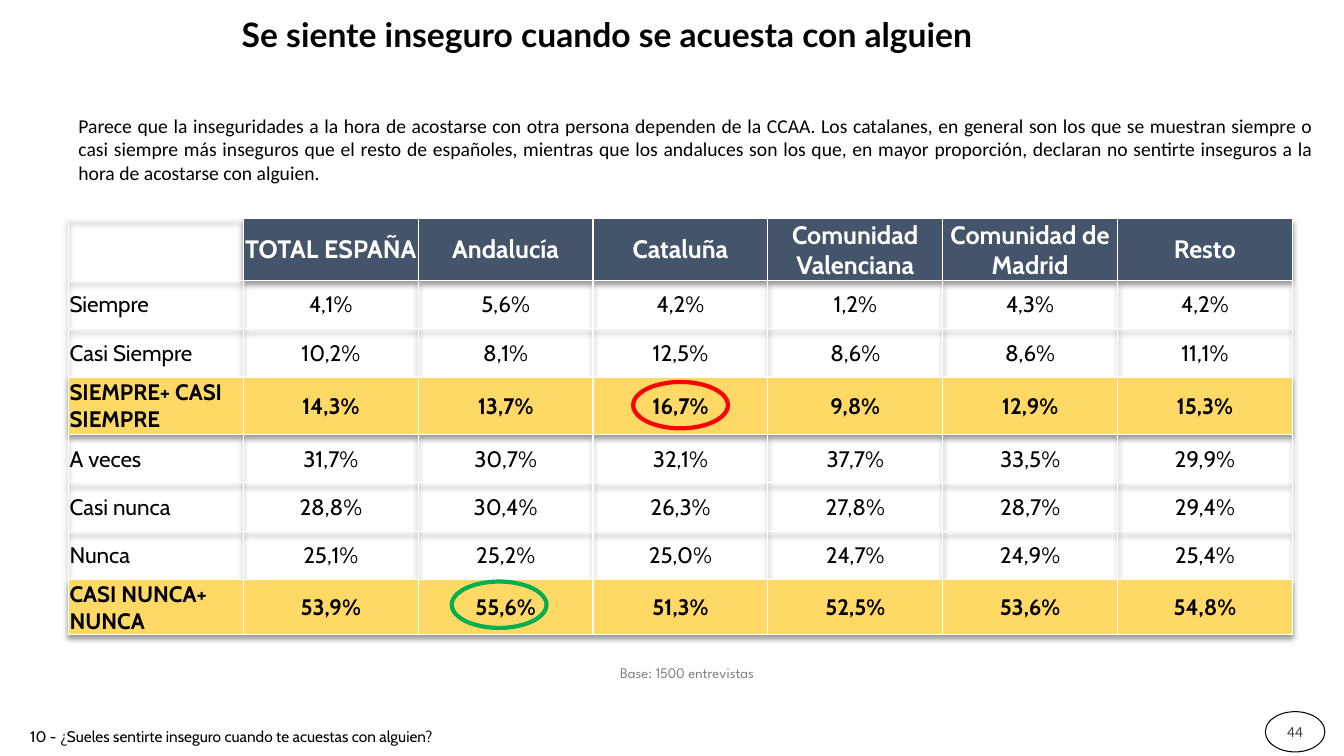
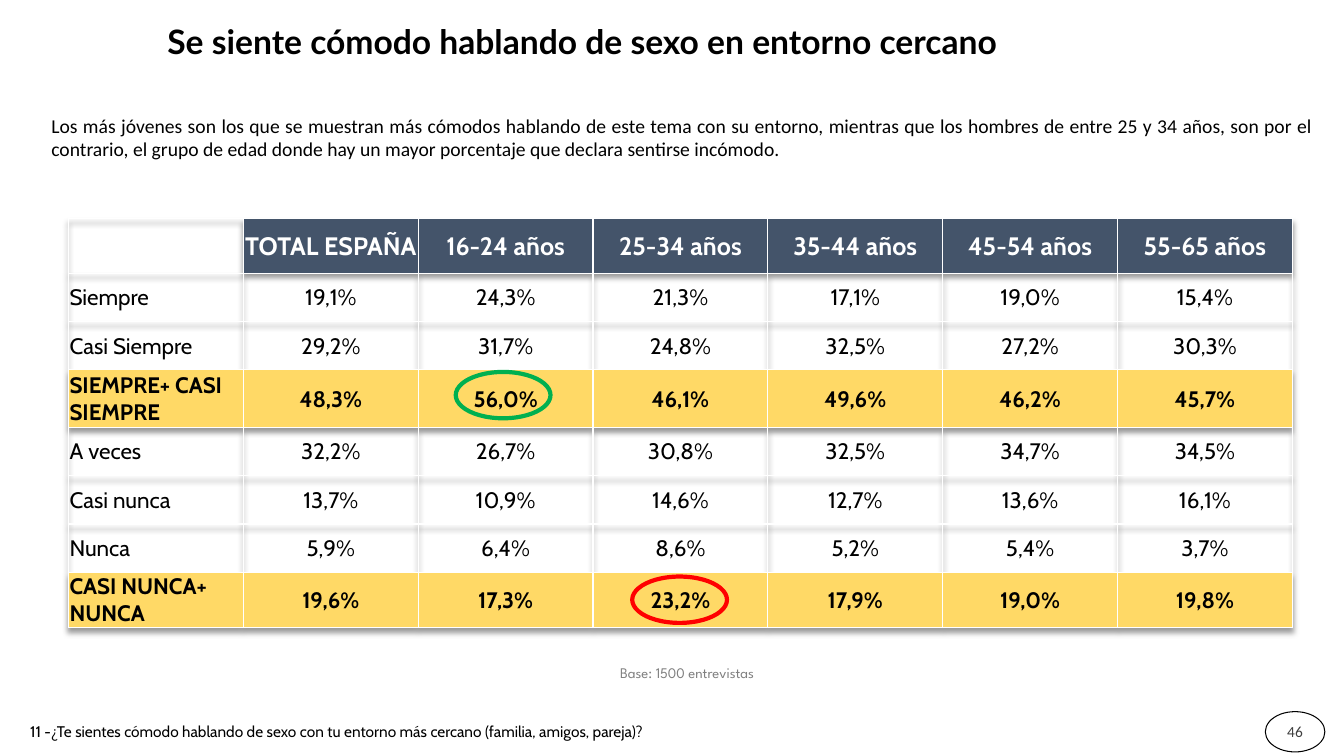
from lxml import etree
from pptx import Presentation
from pptx.dml.color import RGBColor as RGB
from pptx.enum.shapes import MSO_SHAPE as Shape
from pptx.enum.text import MSO_ANCHOR as Anchor, MSO_AUTO_SIZE as Fit, PP_ALIGN as Align
from pptx.oxml import parse_xml
from pptx.oxml.ns import qn
from pptx.util import Inches, Pt

BLACK = RGB(0x00, 0x00, 0x00)
WHITE = RGB(0xFF, 0xFF, 0xFF)
GREY = RGB(0x80, 0x80, 0x80)
DARK = RGB(0x40, 0x40, 0x40)
NAVY = RGB(0x44, 0x54, 0x6A)
GOLD = RGB(0xFF, 0xD9, 0x66)
RED = RGB(0xFF, 0x00, 0x00)
GREEN = RGB(0x00, 0xB0, 0x50)

NS = 'xmlns:a="http://schemas.openxmlformats.org/drawingml/2006/main"'
EDGE = f'<a:{{0}} {NS} w="12700"><a:solidFill><a:srgbClr val="{WHITE}"/></a:solidFill></a:{{0}}>'
SHADOW = (f'<a:effectLst {NS}><a:outerShdw blurRad="50800" dist="38100" dir="5400000">'
          '<a:srgbClr val="000000"><a:alpha val="40000"/></a:srgbClr>'
          '</a:outerShdw></a:effectLst>')

LABELS = ["Siempre", "Casi Siempre", "SIEMPRE+ CASI SIEMPRE", "A veces",
          "Casi nunca", "Nunca", "CASI NUNCA+ NUNCA"]
SUMS = (3, 7)
ROWS = [7.2, 6.4, 6.4, 7.6, 6.4, 6.4, 6.4, 6.8]
LEFT, TOP, WIDTH = 5.1, 28.93, 91.07
RIGHT = 98.5


class Deck:
    """Style and current slide; all lengths are percentages of the slide."""

    def __init__(self):
        self.prs = Presentation()
        self.prs.slide_width, self.prs.slide_height = Inches(13.33), Inches(7.5)

    def wide(self, share):
        return round(self.prs.slide_width * share / 100)

    def high(self, share):
        return round(self.prs.slide_height * share / 100)

    def area(self, x, y, w, h):
        return self.wide(x), self.high(y), self.wide(w), self.high(h)

    def put(self, frame, text, face, size, color=BLACK, align=Align.LEFT, bold=False):
        """Set the text of a frame's first paragraph, and its look."""
        para = frame.paragraphs[0]
        para.text, para.alignment = text, align
        font = para.font
        font.name, font.size, font.bold = face, Pt(size), bold
        font.color.rgb = color

    def page(self, number):
        self.slide = self.prs.slides.add_slide(self.prs.slide_layouts[5])
        badge = self.ring(94.15, 94.13, BLACK, 0.75, 4.43, 5.33)
        badge.fill.solid()
        badge.fill.fore_color.rgb = WHITE
        tint = badge.fill._xPr.find(qn("a:solidFill"))[0]
        etree.SubElement(tint, qn("a:alpha")).set("val", "70000")
        frame = badge.text_frame
        frame.margin_left = frame.margin_right = Inches(0.02)
        frame.vertical_anchor = Anchor.MIDDLE
        self.put(frame, number, "Calibri", 11, DARK, Align.CENTER)
        self.text("Base: 1500 entrevistas", (43.06, 87.2, 16.13, 3.73),
                  "League Spartan", 10.5, GREY, Align.CENTER)

    def title(self, text, x, y, w, align):
        head = self.slide.shapes.title
        head.left, head.top, head.width, head.height = self.area(x, y, w, 8.13)
        frame = head.text_frame
        frame.auto_size, frame.vertical_anchor = Fit.NONE, Anchor.MIDDLE
        self.put(frame, text, "Lato", 24, align=align, bold=True)

    def text(self, text, box, *style):
        frame = self.slide.shapes.add_textbox(*self.area(*box)).text_frame
        frame.word_wrap = True
        self.put(frame, text, *style)

    def lead(self, text, x):
        self.text(text, (x, 14.4, RIGHT - x, 10.8), "Calibri", 14, BLACK, Align.JUSTIFY)

    def note(self, text, y):
        self.text(text, (1.5, y, 54.9, 3.87), "Cabin", 11)

    def ring(self, x, y, color, line=3, w=7.05, h=6.13):
        oval = self.slide.shapes.add_shape(Shape.OVAL, *self.area(x, y, w, h))
        oval.shadow.inherit = False
        oval.fill.background()
        oval.line.color.rgb, oval.line.width = color, Pt(line)
        return oval

    def cell(self, cell, text, fill, *style):
        cell.margin_left = cell.margin_right = cell.margin_top = Inches(0.01)
        cell.margin_bottom = 0
        cell.vertical_anchor = Anchor.MIDDLE
        props = cell._tc.get_or_add_tcPr()
        for side in ("lnL", "lnR", "lnT", "lnB"):
            props.append(parse_xml(EDGE.format(side)))
        if fill is None:
            cell.fill.background()
        else:
            cell.fill.solid()
            cell.fill.fore_color.rgb = fill
        if text:
            self.put(cell.text_frame, text, "Cabin", *style)

    def table(self, heads, lines):
        """Each line holds one row's percentages, parted by spaces."""
        body = [[name] + [f"{num}%" for num in line.split()]
                for name, line in zip(LABELS, lines)]
        data = [[""] + heads] + body
        cols = len(data[0])
        grid = self.slide.shapes.add_table(
            len(data), cols, *self.area(LEFT, TOP, WIDTH, sum(ROWS))).table
        grid.horz_banding = False
        grid._tbl.tblPr.insert(0, parse_xml(SHADOW))
        for col in grid.columns:
            col.width = self.wide(WIDTH / cols)
        for r, row in enumerate(data):
            grid.rows[r].height = self.high(ROWS[r])
            for c, text in enumerate(row):
                align = Align.CENTER if c else Align.LEFT
                if r == 0:
                    look = (NAVY if c else None, 18, WHITE, align, True)
                else:
                    look = (GOLD if r in SUMS else None, 16, BLACK, align, r in SUMS)
                self.cell(grid.cell(r, c), text, *look)


def main():
    deck = Deck()

    deck.page("44")
    deck.title("Se siente inseguro cuando se acuesta con alguien", 12.23, 0.4, 65.87,
               Align.CENTER)
    deck.lead("Parece que la inseguridades a la hora de acostarse con otra persona dependen "
              "de la CCAA. Los catalanes, en general son los que se muestran siempre o casi "
              "siempre más inseguros que el resto de españoles, mientras que los andaluces "
              "son los que, en mayor proporción, declaran no sentirte inseguros a la hora de "
              "acostarse con alguien.", LEFT)
    deck.table(["TOTAL ESPAÑA", "Andalucía", "Cataluña", "Comunidad Valenciana",
                "Comunidad de Madrid", "Resto"],
               ["4,1 5,6 4,2 1,2 4,3 4,2",
                "10,2 8,1 12,5 8,6 8,6 11,1",
                "14,3 13,7 16,7 9,8 12,9 15,3",
                "31,7 30,7 32,1 37,7 33,5 29,9",
                "28,8 30,4 26,3 27,8 28,7 29,4",
                "25,1 25,2 25,0 24,7 24,9 25,4",
                "53,9 55,6 51,3 52,5 53,6 54,8"])
    deck.note("10 - ¿Sueles sentirte inseguro cuando te acuestas con alguien?", 95.47)
    deck.ring(47.11, 50.53, RED)
    deck.ring(33.61, 76.93, GREEN)

    deck.page("46")
    deck.title("Se siente cómodo hablando de sexo en entorno cercano", 11.7, 1.33, 85.37,
               Align.LEFT)
    deck.lead("Los más jóvenes son los que se muestran más cómodos hablando de este tema con "
              "su entorno, mientras que los hombres de entre 25 y 34 años, son por el "
              "contrario, el grupo de edad donde hay un mayor porcentaje que declara sentirse "
              "incómodo.", 3.08)
    deck.table(["TOTAL ESPAÑA", "16-24 años", "25-34 años", "35-44 años", "45-54 años",
                "55-65 años"],
               ["19,1 24,3 21,3 17,1 19,0 15,4",
                "29,2 31,7 24,8 32,5 27,2 30,3",
                "48,3 56,0 46,1 49,6 46,2 45,7",
                "32,2 26,7 30,8 32,5 34,7 34,5",
                "13,7 10,9 14,6 12,7 13,6 16,1",
                "5,9 6,4 8,6 5,2 5,4 3,7",
                "19,6 17,3 23,2 17,9 19,0 19,8"])
    deck.note("11 -¿Te sientes cómodo hablando de sexo con tu entorno más cercano "
              "(familia, amigos, pareja)?", 94.8)
    deck.ring(47.04, 76.27, RED)
    deck.ring(33.91, 49.2, GREEN)

    deck.prs.save("out.pptx")


if __name__ == "__main__":
    main()
